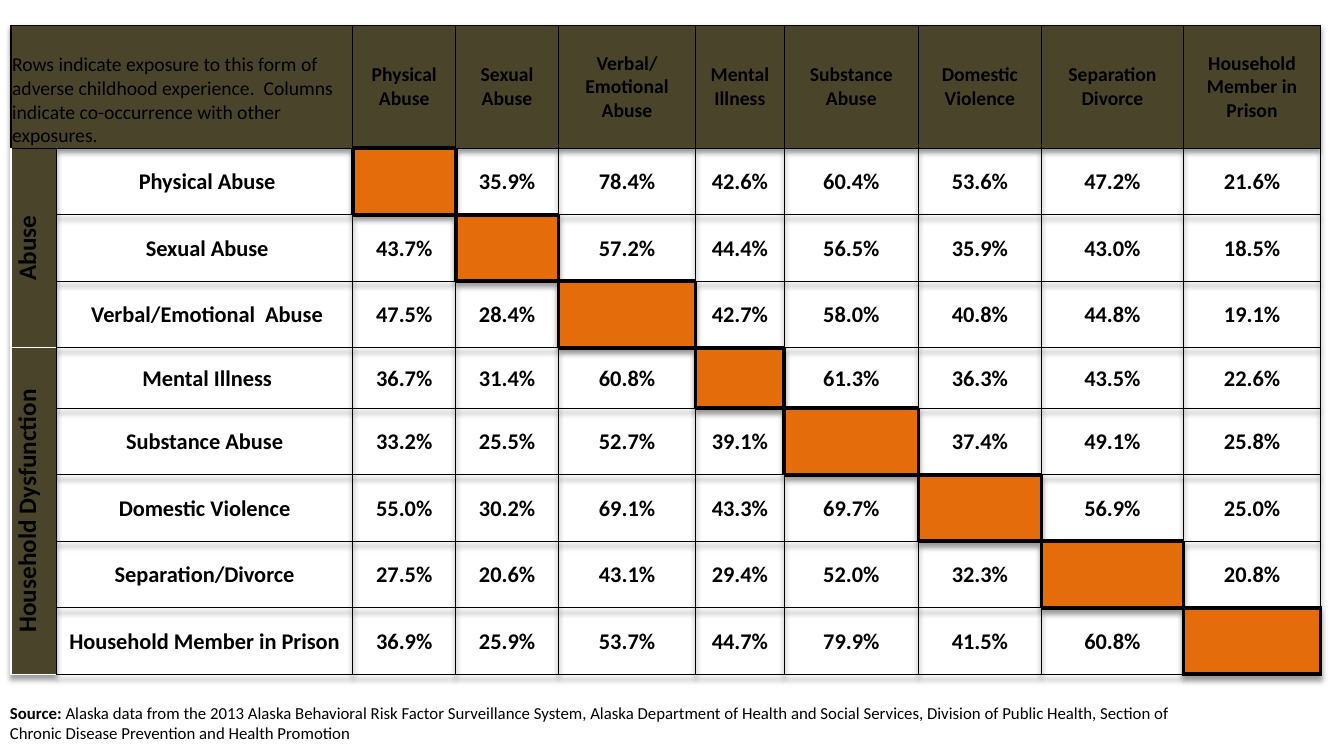
import dataclasses

import lxml.etree
import pptx
import pptx.dml.color
import pptx.enum.text
import pptx.oxml.ns
import pptx.util


@dataclasses.dataclass
class Theme:
    """Colours, font and type sizes of the slide."""
    font: str = "Calibri"
    ink: str = "000000"
    paper: str = "FFFFFF"
    band: str = "4A452A"
    diagonal: str = "E46C0A"
    note: int = 12
    head: int = 14
    body: int = 16
    group: int = 18
    thin: int = 1
    thick: int = 3


class Deck:
    """Draws on one slide laid out as a grid of 1333 columns and 750 rows."""
    COLS, ROWS = 1333, 750
    NO_STYLE = "{2D5ABB26-0587-4C30-8999-92F81FD0307C}"

    def __init__(self, theme):
        """Start a presentation with one blank slide."""
        self.theme = theme
        self.prs = pptx.Presentation()
        self.prs.slide_width = pptx.util.Inches(13.33)
        self.prs.slide_height = pptx.util.Inches(7.5)
        self.s = self.prs.slides.add_slide(self.prs.slide_layouts[6])

    def x(self, cols):
        """Turn grid columns into a length."""
        return round(self.prs.slide_width * cols / self.COLS)

    def y(self, rows):
        """Turn grid rows into a length."""
        return round(self.prs.slide_height * rows / self.ROWS)

    def sub(self, parent, tag, **attrs):
        """Append a DrawingML element."""
        return lxml.etree.SubElement(parent, pptx.oxml.ns.qn(tag), **attrs)

    def style(self, font, size, bold=None):
        """Set the theme font, size and ink."""
        font.name, font.size, font.bold = self.theme.font, pptx.util.Pt(size), bold
        font.color.rgb = pptx.dml.color.RGBColor.from_string(self.theme.ink)

    def source(self, left, top, width, height, label, text):
        """Add a note with a bold lead-in."""
        sp = self.s.shapes.add_textbox(self.x(left), self.y(top), self.x(width), self.y(height))
        tf = sp.text_frame
        tf.word_wrap = True
        tf.vertical_anchor = pptx.enum.text.MSO_ANCHOR.MIDDLE
        p = tf.paragraphs[0]
        self.style(p.font, self.theme.note)
        for part, bold in ((label, True), (text, False)):
            r = p.add_run()
            r.text = part
            r.font.bold = bold

    def table(self, left, top, widths, heights):
        """Add an unstyled table with a soft shadow."""
        sp = self.s.shapes.add_table(len(heights), len(widths), self.x(left), self.y(top),
                                     self.x(sum(widths)), self.y(sum(heights)))
        tbl = sp.table
        for col, width in zip(tbl.columns, widths):
            col.width = self.x(width)
        for row, height in zip(tbl.rows, heights):
            row.height = self.y(height)
        tbl.first_row = tbl.horz_banding = False
        props = sp._element.graphic.graphicData.tbl.tblPr
        props.find(pptx.oxml.ns.qn("a:tableStyleId")).text = self.NO_STYLE
        effects = self.sub(props, "a:effectLst")
        props.insert(0, effects)
        shadow = self.sub(effects, "a:outerShdw", blurRad="50800", dist="38100",
                          dir="5400000", algn="t", rotWithShape="0")
        self.sub(self.sub(shadow, "a:prstClr", val="black"), "a:alpha", val="40000")
        return tbl

    def cell(self, cell, text, size, edges, fill=None, bold=True, vertical=False):
        """Fill one cell with text, borders and colour."""
        align, anchor = pptx.enum.text.PP_ALIGN, pptx.enum.text.MSO_ANCHOR
        cell.margin_left = cell.margin_right = cell.margin_top = pptx.util.Inches(0.01)
        cell.margin_bottom = 0
        cell.vertical_anchor = anchor.MIDDLE if bold else anchor.BOTTOM
        cell.text = text
        p = cell.text_frame.paragraphs[0]
        p.alignment = align.CENTER if bold else align.LEFT
        self.style(p.font, size, bold)
        props = cell._tc.get_or_add_tcPr()
        if vertical:
            props.set("vert", "vert270")
        for side in "LRTB":
            color, weight = edges[side]
            ln = self.sub(props, "a:ln" + side, w=str(pptx.util.Pt(weight)))
            self.sub(self.sub(ln, "a:solidFill"), "a:srgbClr", val=color)
        if fill:
            cell.fill.solid()
            cell.fill.fore_color.rgb = pptx.dml.color.RGBColor.from_string(fill)
        else:
            cell.fill.background()

    def edges(self, row, col):
        """Give the borders of a cell, heavy around the diagonal."""
        t = self.theme
        near = {"L": (row, col - 1), "R": (row, col + 1), "T": (row - 1, col), "B": (row + 1, col)}

        def on_diagonal(r, c):
            return r > 0 and c == r + 1
        return {side: (t.ink, t.thick if on_diagonal(row, col) or on_diagonal(*pos) else t.thin)
                for side, pos in near.items()}


INTRO = ("Rows indicate exposure to this form of adverse childhood experience.  "
         "Columns indicate co-occurrence with other exposures.")
HEADS = ["Physical Abuse", "Sexual Abuse", "Verbal/ Emotional Abuse", "Mental Illness",
         "Substance Abuse", "Domestic Violence", "Separation Divorce", "Household Member in Prison"]
RATES = [
    (" Physical Abuse", "35.9 78.4 42.6 60.4 53.6 47.2 21.6"),
    (" Sexual Abuse", "43.7 57.2 44.4 56.5 35.9 43.0 18.5"),
    (" Verbal/Emotional  Abuse", "47.5 28.4 42.7 58.0 40.8 44.8 19.1"),
    (" Mental Illness", "36.7 31.4 60.8 61.3 36.3 43.5 22.6"),
    ("Substance Abuse", "33.2 25.5 52.7 39.1 37.4 49.1 25.8"),
    ("Domestic Violence", "55.0 30.2 69.1 43.3 69.7 56.9 25.0"),
    ("Separation/Divorce", "27.5 20.6 43.1 29.4 52.0 32.3 20.8"),
    ("Household Member in Prison", "36.9 25.9 53.7 44.7 79.9 41.5 60.8"),
]
GROUPS = [("Abuse", 1, 3), ("Household Dysfunction", 4, 8)]
WIDTHS = [45, 294, 102, 102, 136, 88, 133, 122, 141, 136]
HEIGHTS = [122, 66, 66, 66, 60, 66, 66, 66, 66]


def main():
    """Build the co-occurrence table and its source note."""
    t = Theme()
    deck = Deck(t)
    deck.source(0, 692, 1200, 50, "Source: ",
                "Alaska data from the 2013 Alaska Behavioral Risk Factor Surveillance System, "
                "Alaska Department of Health and Social Services, Division of Public Health, "
                "Section of Chronic Disease Prevention and Health Promotion")
    tbl = deck.table(11, 25, WIDTHS, HEIGHTS)

    tbl.cell(0, 0).merge(tbl.cell(0, 1))
    deck.cell(tbl.cell(0, 0), INTRO, t.head, deck.edges(0, 0), t.band, bold=False)
    for col, head in enumerate(HEADS, 2):
        deck.cell(tbl.cell(0, col), head, t.head, deck.edges(0, col), t.band)

    for name, first, last in GROUPS:
        tbl.cell(first, 0).merge(tbl.cell(last, 0))
        edges = deck.edges(first, 0)
        edges["L"] = edges["B"] = (t.paper, t.thin)
        if first > 1:
            edges["T"] = (t.paper, t.thin)
        deck.cell(tbl.cell(first, 0), name, t.group, edges, t.band, vertical=True)

    for row, (label, rates) in enumerate(RATES, 1):
        texts = [label] + [rate + "%" for rate in rates.split()]
        texts.insert(row, "")
        for col, text in enumerate(texts, 1):
            fill = None if text else t.diagonal
            deck.cell(tbl.cell(row, col), text, t.body, deck.edges(row, col), fill)

    deck.prs.save("out.pptx")


if __name__ == "__main__":
    main()
